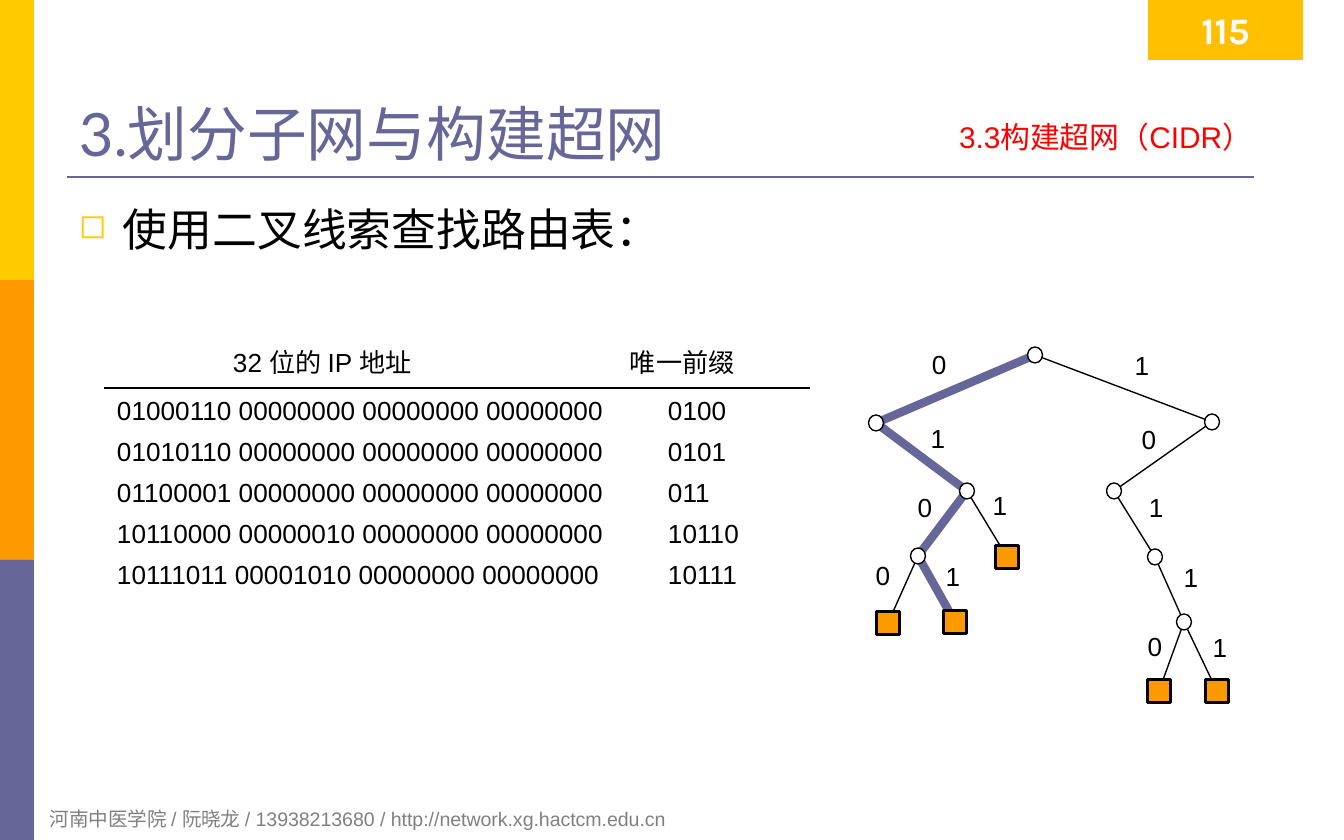
from lxml.etree import SubElement
from pptx import Presentation
from pptx.dml.color import RGBColor
from pptx.enum.shapes import MSO_CONNECTOR, MSO_SHAPE
from pptx.enum.text import MSO_ANCHOR, PP_ALIGN
from pptx.oxml.ns import qn
from pptx.util import Pt

PX = 9144000 / 1344

YELLOW = RGBColor(0xFF, 0xCC, 0x00)
ORANGE = RGBColor(0xFF, 0x99, 0x00)
SLATE = RGBColor(0x66, 0x66, 0x99)
AMBER = RGBColor(0xFF, 0xC0, 0x00)
RED = RGBColor(0xFF, 0x00, 0x00)
GRAY = RGBColor(0x80, 0x80, 0x80)
BLACK = RGBColor(0x00, 0x00, 0x00)
WHITE = RGBColor(0xFF, 0xFF, 0xFF)

ROUTES = [
    ("01000110 00000000 00000000 00000000", "0100"),
    ("01010110 00000000 00000000 00000000", "0101"),
    ("01100001 00000000 00000000 00000000", "011"),
    ("10110000 00000010 00000000 00000000", "10110"),
    ("10111011 00001010 00000000 00000000", "10111"),
]

NODES = {
    "": (172, 15), "0": (13, 83), "1": (349, 82), "01": (104, 151),
    "10": (251, 151), "010": (55, 216), "101": (292, 217), "1011": (321, 282),
}
LEAVES = {
    "0100": (25, 283), "0101": (92, 282), "011": (144, 217),
    "10110": (296, 351), "10111": (354, 351),
}
BITS = {
    "0": (76, 24), "1": (279, 25), "01": (75, 98), "10": (286, 99),
    "010": (62, 167), "011": (137, 165), "101": (293, 167),
    "0100": (20, 235), "0101": (90, 236), "1011": (328, 237),
    "10110": (292, 306), "10111": (357, 307),
}


def px(length):
    return round(length * PX)


def apply(target, formats):
    for key, value in formats.items():
        setattr(target, key, value)


def write(paragraph, wording, size, color, name="Arial", bold=False):
    run = paragraph.add_run()
    run.text = wording
    apply(run.font, {"size": Pt(size), "name": name, "bold": bold})
    run.font.color.rgb = color


def add_label(slide, box, **formats):
    label = slide.shapes.add_textbox(*map(px, box))
    apply(label.text_frame, {
        "word_wrap": True, "margin_left": px(12), "margin_right": px(12),
        "margin_top": px(6), "margin_bottom": px(6), **formats,
    })
    return label.text_frame


def add_figure(slide, kind, box, fill, border=None):
    figure = slide.shapes.add_shape(kind, *map(px, box))
    figure.shadow.inherit = False
    figure.fill.solid()
    figure.fill.fore_color.rgb = fill
    if border:
        figure.line.color.rgb = BLACK
        figure.line.width = Pt(border)
    else:
        figure.line.fill.background()
    return figure


def add_rule(slide, start, end, color, width):
    rule = slide.shapes.add_connector(MSO_CONNECTOR.STRAIGHT, *map(px, (*start, *end)))
    rule.line.color.rgb = color
    rule.line.width = Pt(width)
    SubElement(rule._element.spPr, qn("a:effectLst"))


def add_tabs(paragraph, *stops):
    tabs = SubElement(paragraph._p.get_or_add_pPr(), qn("a:tabLst"))
    for stop in stops:
        SubElement(tabs, qn("a:tab"), pos=str(px(stop)), algn="l")


def add_sidebar(slide, left, top, width, height):
    colors = (YELLOW, ORANGE, SLATE)
    band = height // len(colors)
    for index, color in enumerate(colors):
        add_figure(slide, MSO_SHAPE.RECTANGLE, (left, top + index * band, width, band), color)


def add_header(slide, left, top, width, height):
    add_rule(slide, (left, top + height), (left + width, top + height), SLATE, 1.5)
    title = add_label(slide, (left, top + 34, 1210, 140), vertical_anchor=MSO_ANCHOR.BOTTOM)
    write(title.paragraphs[0], "3.划分子网与构建超网", 32, SLATE, "Lato")
    section = add_label(slide, (left + 774, top + 113, 423, 52)).paragraphs[0]
    section.alignment = PP_ALIGN.RIGHT
    write(section, "3.3构建超网（CIDR）", 16, RED)


def add_page_number(slide, left, top, width, height):
    badge = add_figure(slide, MSO_SHAPE.RECTANGLE, (left, top, width, height), AMBER)
    number = badge.text_frame.paragraphs[0]
    number.alignment = PP_ALIGN.CENTER
    write(number, "115", 20, WHITE, "Karla", True)


def add_topic(slide, left, top, width, height):
    topic = add_label(slide, (left, top, width, height)).paragraphs[0]
    properties = topic._p.get_or_add_pPr()
    properties.set("marL", str(px(44)))
    properties.set("indent", str(-px(44)))
    bullet_color = SubElement(properties, qn("a:buClr"))
    SubElement(bullet_color, qn("a:srgbClr"), val=str(YELLOW))
    SubElement(properties, qn("a:buSzPct"), val="75000")
    SubElement(properties, qn("a:buChar"), char="◻")
    write(topic, "使用二叉线索查找路由表：", 24, BLACK)


def add_routes(slide, left, top, width, height):
    routes = add_label(slide, (left, top, width, height), margin_left=px(13))
    heading = routes.paragraphs[0]
    heading.space_after = Pt(4)
    add_tabs(heading, 116, 513)
    write(heading, "\t32 位的 IP 地址\t唯一前缀", 14, BLACK)
    for address, prefix in ROUTES:
        route = routes.add_paragraph()
        route.line_spacing = Pt(22)
        add_tabs(route, 551)
        write(route, f"{address}\t{prefix}", 14, BLACK)
    add_rule(slide, (left, top + 48), (left + width, top + 48), BLACK, 0.75)


def add_trie(slide, left, top):
    def place(point):
        return left + point[0], top + point[1]

    def around(point, width, height):
        x, y = place(point)
        return x - width / 2, y - height / 2, width, height

    centers = {**NODES, **LEAVES}
    for end, color, width in (("10111", BLACK, 0.75), ("0101", SLATE, 4.5)):
        route = [tuple(map(px, place(centers[end[:depth]]))) for depth in range(len(end) + 1)]
        builder = slide.shapes.build_freeform(*route[0])
        builder.add_line_segments(route[1:], close=False)
        branch = builder.convert_to_shape()
        branch.shadow.inherit = False
        branch.fill.background()
        branch.line.color.rgb = color
        branch.line.width = Pt(width)
    for prefix in ("0100", "011", "10110"):
        add_rule(slide, place(centers[prefix[:-1]]), place(centers[prefix]), BLACK, 0.75)
    for prefix, point in BITS.items():
        bit = add_label(slide, around(point, 43, 46), vertical_anchor=MSO_ANCHOR.MIDDLE)
        bit.paragraphs[0].alignment = PP_ALIGN.CENTER
        write(bit.paragraphs[0], prefix[-1], 14, BLACK)
    for point in NODES.values():
        add_figure(slide, MSO_SHAPE.OVAL, around(point, 15, 16), WHITE, 0.75)
    for point in LEAVES.values():
        add_figure(slide, MSO_SHAPE.RECTANGLE, around(point, 23, 23), ORANGE, 1.5)


def add_footer(slide, left, top, width, height):
    footer = add_label(slide, (left, top, width, height))
    write(footer.paragraphs[0],
          "河南中医学院 / 阮晓龙 / 13938213680 / http://network.xg.hactcm.edu.cn", 10.5, GRAY)


def main():
    deck = Presentation()
    apply(deck, {"slide_width": px(1344), "slide_height": px(840)})
    slide = deck.slides.add_slide(deck.slide_layouts[6])
    add_sidebar(slide, 0, 0, 34, 840)
    add_footer(slide, 38, 801, 910, 38)
    add_header(slide, 67, 0, 1187, 177)
    add_page_number(slide, 1148, 0, 155, 60)
    add_topic(slide, 67, 196, 1210, 555)
    add_routes(slide, 104, 340, 706, 292)
    add_trie(slide, 863, 340)
    deck.save("out.pptx")


if __name__ == "__main__":
    main()
